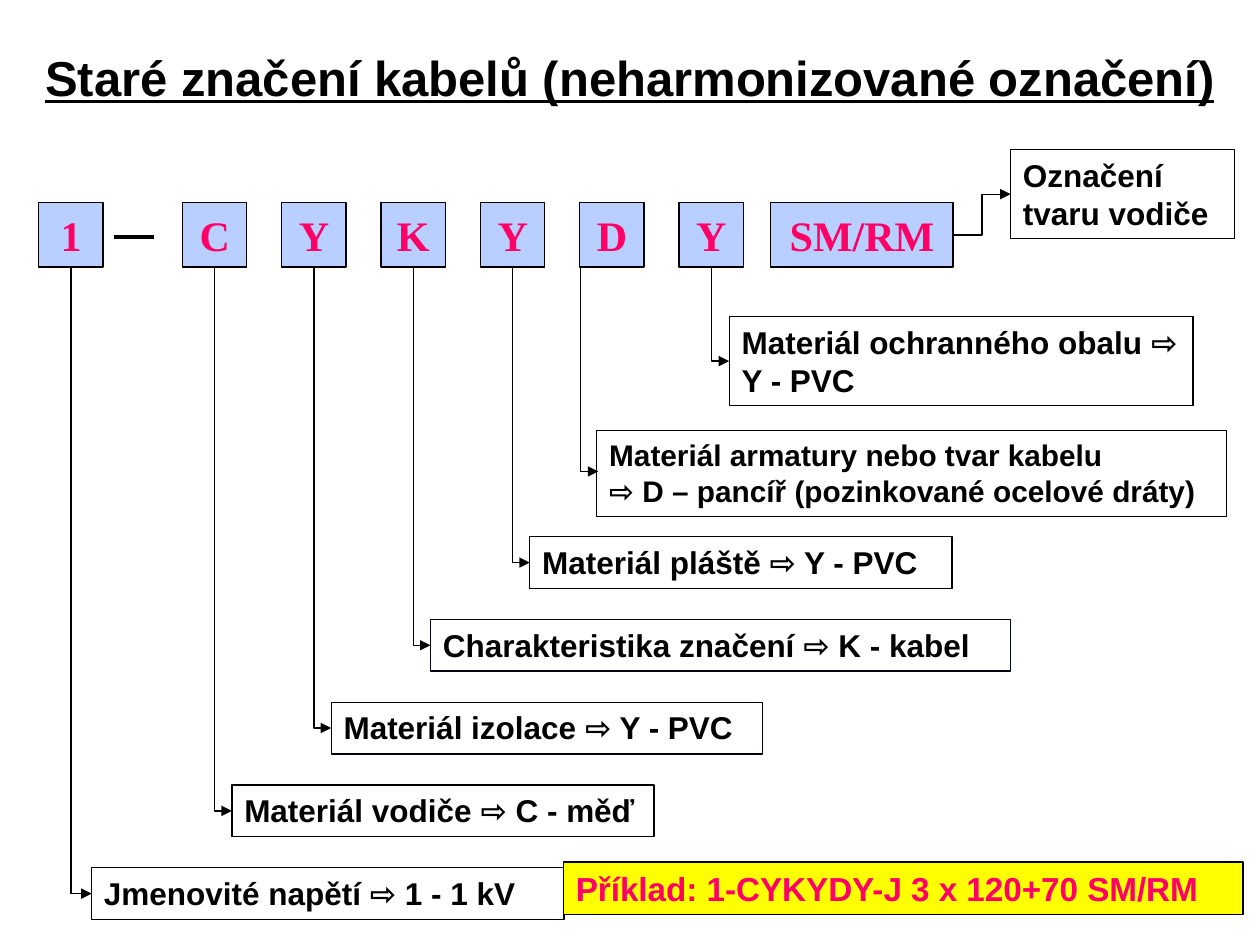
from lxml import etree
from pptx import Presentation
from pptx.dml.color import RGBColor
from pptx.enum.shapes import MSO_CONNECTOR, MSO_SHAPE
from pptx.enum.text import MSO_ANCHOR, MSO_AUTO_SIZE, PP_ALIGN
from pptx.oxml.ns import qn
from pptx.util import Pt

BLACK = RGBColor(0x00, 0x00, 0x00)
INK = RGBColor(0x00, 0x05, 0x14)
BLUE = RGBColor(0xB8, 0xCF, 0xFF)
PINK = RGBColor(0xFF, 0x00, 0x66)
YELLOW = RGBColor(0xFF, 0xFF, 0x00)

RECTANGLE = MSO_SHAPE.RECTANGLE
STRAIGHT, ELBOW = MSO_CONNECTOR.STRAIGHT, MSO_CONNECTOR.ELBOW
MIDDLE, CENTER = MSO_ANCHOR.MIDDLE, PP_ALIGN.CENTER
FIT_TEXT = MSO_AUTO_SIZE.SHAPE_TO_FIT_TEXT
RIGHT_SITE, LEFT_SITE = 3, 1

# Code boxes: a first one, then a row with an even step
CODE_TOP, CODE_SIZE = 115.9, 36.8
CODE_LEFT, CODE_STEP = 104.3, 56.75
CODES = "CYKYDY"

# Single-line labels: a staircase that rises from the bottom left
LABEL_LEFT, LABEL_TOP, LABEL_RISE, LABEL_HEIGHT = 132.5, 448.6, 47.3, 29.5
STAIR_LABELS = [
    ("Materiál vodiče ⇨ C - měď", 241.3, BLACK),
    ("Materiál izolace ⇨ Y - PVC", 246.3, INK),
    ("Charakteristika značení ⇨ K - kabel", 331.3, INK),
    ("Materiál pláště ⇨ Y - PVC", 241.3, BLACK),
]


def format_text(shape, size, color, font="Arial", align=None, underline=None):
    for paragraph in shape.text_frame.paragraphs:
        paragraph.alignment = align
        for run in paragraph.runs:
            run.font.name = font
            run.font.size = Pt(size)
            run.font.bold = True
            run.font.underline = underline
            run.font.color.rgb = color


def add_title(slide, text):
    title = slide.shapes.add_textbox(Pt(14.4), Pt(21.6), Pt(691.2), Pt(44.6))
    title.text_frame.word_wrap = True
    title.text_frame.vertical_anchor = MIDDLE
    title.text_frame.text = text
    format_text(title, 28, BLACK, align=CENTER, underline=True)


def add_code(slide, text, left, width=CODE_SIZE):
    code = slide.shapes.add_shape(
        RECTANGLE, Pt(left), Pt(CODE_TOP), Pt(width), Pt(CODE_SIZE))
    code.shadow.inherit = False
    code.fill.solid()
    code.fill.fore_color.rgb = BLUE
    code.line.color.rgb = BLACK
    code.line.width = Pt(0.75)
    code.text_frame.word_wrap = False
    code.text_frame.vertical_anchor = MIDDLE
    code.text_frame.text = text
    format_text(code, 24, PINK, font="Times New Roman", align=CENTER)
    return code


def add_label(slide, text, left, top, width, height=LABEL_HEIGHT, size=18,
              color=BLACK, outline=BLACK, fill=None):
    label = slide.shapes.add_textbox(Pt(left), Pt(top), Pt(width), Pt(height))
    label.line.color.rgb = outline
    label.line.width = Pt(0.75)
    if fill is not None:
        label.fill.solid()
        label.fill.fore_color.rgb = fill
    label.text_frame.word_wrap = True
    label.text_frame.auto_size = FIT_TEXT
    label.text_frame.text = text
    format_text(label, size, color)
    return label


def add_line(slide, kind, start, end, width=0.75, arrow=False):
    line = slide.shapes.add_connector(kind, *map(Pt, start + end))
    line.line.color.rgb = BLACK
    line.line.width = Pt(width)
    if arrow:
        outline = line.line._get_or_add_ln()
        etree.SubElement(outline, qn("a:tailEnd"), type="triangle")
    etree.SubElement(line._element.spPr, qn("a:effectLst"))
    return line


def add_corner_arrow(slide, x, label_left, y):
    """Arrow going down from a code box, then right to its label."""
    start_y = CODE_TOP + CODE_SIZE
    arrow = add_line(slide, ELBOW, (x, start_y), (label_left, y), arrow=True)
    # A single bend is a quarter-turned, mirrored bentConnector2
    across, down = label_left - x, y - start_y
    arrow.left = Pt((x + label_left - down) / 2)
    arrow.top = Pt((start_y + y - across) / 2)
    arrow.width, arrow.height = Pt(down), Pt(across)
    properties = arrow._element.spPr
    properties.find(qn("a:prstGeom")).set("prst", "bentConnector2")
    transform = properties.find(qn("a:xfrm"))
    transform.set("rot", "16200000")
    transform.set("flipH", "1")


def main():
    presentation = Presentation()
    presentation.slide_width, presentation.slide_height = Pt(720), Pt(540)
    slide = presentation.slides.add_slide(presentation.slide_layouts[6])
    add_title(slide, "Staré značení kabelů (neharmonizované označení)")

    # Code row
    add_code(slide, "1", 22.2)
    add_line(slide, STRAIGHT, (65, 135.3), (88, 135.3), width=2)
    code_lefts = [CODE_LEFT + i * CODE_STEP for i in range(len(CODES))]
    for letter, left in zip(CODES, code_lefts):
        add_code(slide, letter, left)
    shape_code = add_code(slide, "SM/RM", 440.5, 104.2)
    half = CODE_SIZE / 2

    # Voltage label and the staircase of labels
    add_label(slide, "Jmenovité napětí ⇨ 1 - 1 kV", 52.3, 495.9, 270)
    add_corner_arrow(slide, 22.2 + half, 52.3, 495.9 + LABEL_HEIGHT / 2)
    for i, (text, width, outline) in enumerate(STAIR_LABELS):
        left = LABEL_LEFT + i * CODE_STEP
        top = LABEL_TOP - i * LABEL_RISE
        add_label(slide, text, left, top, width, outline=outline)
        add_corner_arrow(slide, code_lefts[i] + half, left,
                         top + LABEL_HEIGHT / 2)

    # Armour and outer cover
    add_label(slide, "Materiál armatury nebo tvar kabelu\n"
              "⇨ D – pancíř (pozinkované ocelové dráty)",
              341, 246.2, 360, 49, size=17)
    add_corner_arrow(slide, 331.8, 341.8, 269.4)
    add_label(slide, "Materiál ochranného obalu ⇨ Y - PVC",
              416.7, 180.9, 265, 51)
    add_corner_arrow(slide, code_lefts[5] + half, 416.7, 206.4)

    # Example
    add_label(slide, "Příklad: 1-CYKYDY-J 3 x 120+70 SM/RM",
              322, 492.5, 388.3, 30.2, size=19, color=PINK, fill=YELLOW)

    # Conductor shape
    shape_label = add_label(slide, "Označení tvaru vodiče",
                            577.5, 85.5, 128, 51)
    arrow = add_line(slide, ELBOW, (544.7, 134.3), (577.5, 111), arrow=True)
    arrow.begin_connect(shape_code, RIGHT_SITE)
    arrow.end_connect(shape_label, LEFT_SITE)

    presentation.save("out.pptx")


if __name__ == "__main__":
    main()
